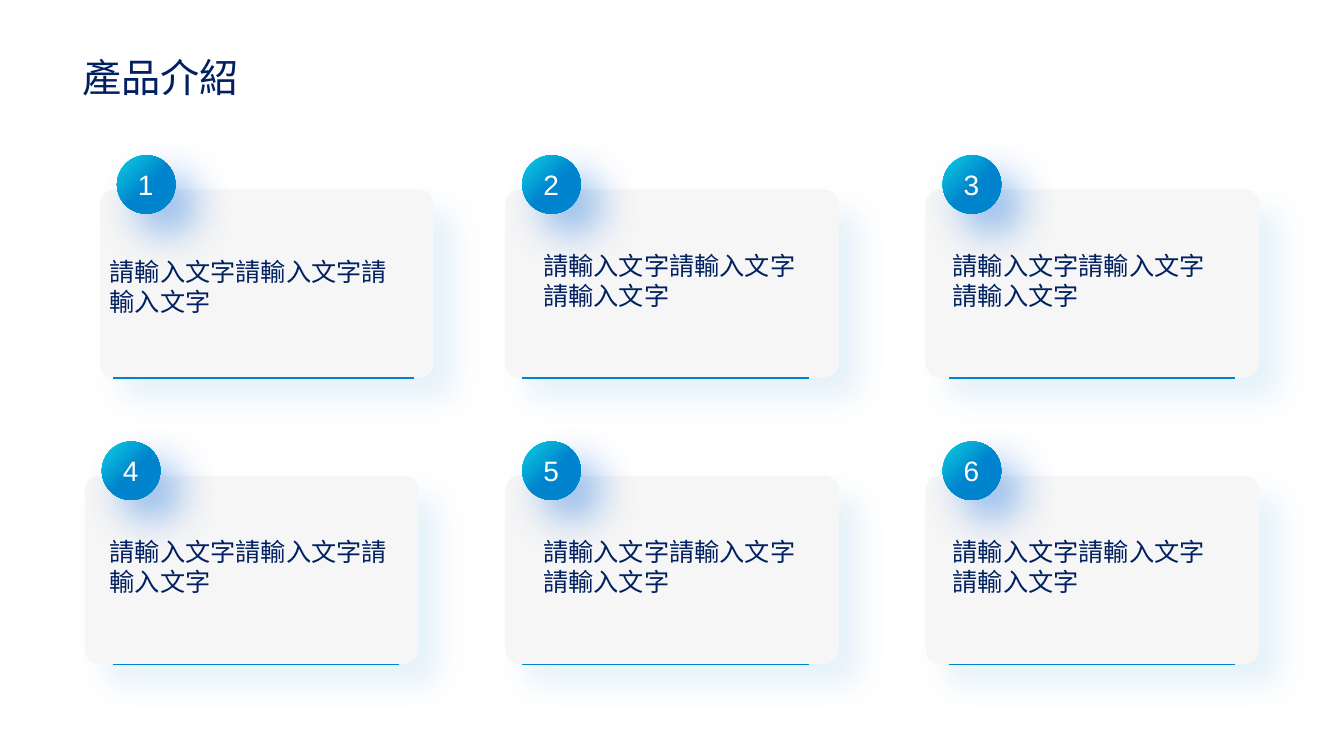
from lxml import etree
from pptx import Presentation
from pptx.dml.color import RGBColor
from pptx.enum.shapes import MSO_CONNECTOR, MSO_SHAPE
from pptx.enum.text import MSO_AUTO_SIZE
from pptx.oxml.ns import qn
from pptx.util import Inches, Pt

ROUNDED = MSO_SHAPE.ROUNDED_RECTANGLE
OVAL = MSO_SHAPE.OVAL
STRAIGHT = MSO_CONNECTOR.STRAIGHT
FIT_SHAPE = MSO_AUTO_SIZE.SHAPE_TO_FIT_TEXT

COLORS = {
    "navy": "002060",
    "white": "FFFFFF",
    "card": "F6F6F6",
    "blue": "0084CD",
    "cyan": "0BD0E3",
    "glow": "0868DE",
}
CJK_FONT = "Noto Sans CJK SC"
CARD_TEXT = "請輸入文字請輸入文字請輸入文字"
CARD_WIDTH, CARD_HEIGHT, BADGE_SIZE = 3.31, 1.87, 0.58
ROW_TOPS = [1.88, 4.72]
COLUMNS = [
    {"card": 0.84, "text": 0.99, "text_width": 2.97, "line": 1.12},
    {"card": 5.01, "text": 5.29, "text_width": 2.73, "line": 5.18},
    {"card": 9.18, "text": 9.35, "text_width": 2.9, "line": 9.41},
]


def add_text(shapes, text, left, top, width, height, size, color, font="Arial", wrap=True):
    box = shapes.add_textbox(Inches(left), Inches(top), Inches(width), Inches(height))
    frame = box.text_frame
    frame.word_wrap = wrap
    frame.auto_size = FIT_SHAPE
    run = frame.paragraphs[0].add_run()
    run.text = text
    run.font.size = Pt(size)
    run.font.name = font
    run.font.color.rgb = RGBColor.from_string(COLORS[color])
    east_asian = etree.SubElement(run._r.get_or_add_rPr(), qn("a:ea"))
    east_asian.set("typeface", CJK_FONT)


def add_shadow(shape, color, alpha, blur, distance):
    shape.shadow.inherit = False
    effects = shape._element.spPr.find(qn("a:effectLst"))
    shadow = etree.SubElement(effects, qn("a:outerShdw"), blurRad=str(Pt(blur)),
                              dist=str(Pt(distance)), dir="2700000", algn="tl",
                              rotWithShape="0")
    tint = etree.SubElement(shadow, qn("a:srgbClr"), val=COLORS[color])
    etree.SubElement(tint, qn("a:alpha"), val=str(alpha * 1000))


presentation = Presentation()
presentation.slide_width = Inches(13.33)
presentation.slide_height = Inches(7.5)
slide = presentation.slides.add_slide(presentation.slide_layouts[6])

add_text(slide.shapes, "產品介紹", 0.72, 0.48, 1.76, 0.57,
         size=28, color="navy", font=CJK_FONT, wrap=False)

for row, card_top in enumerate(ROW_TOPS):
    for column, place in enumerate(COLUMNS):
        number = row * len(COLUMNS) + column + 1
        is_first = number == 1
        card_left = place["card"] + (0.15 if is_first else 0)
        shapes = slide.shapes.add_group_shape().shapes

        card = shapes.add_shape(ROUNDED, Inches(card_left), Inches(card_top),
                                Inches(CARD_WIDTH), Inches(CARD_HEIGHT))
        card.adjustments[0] = 0.079
        card.fill.solid()
        card.fill.fore_color.rgb = RGBColor.from_string(COLORS["card"])
        card.line.fill.background()
        add_shadow(card, "blue", alpha=10, blur=22, distance=21)

        badge = shapes.add_shape(OVAL, Inches(card_left + 0.17), Inches(card_top - 0.34),
                                 Inches(BADGE_SIZE), Inches(BADGE_SIZE))
        badge.fill.gradient()
        badge.fill.gradient_angle = 315
        for stop, color, position in zip(badge.fill.gradient_stops, ["cyan", "blue"], [0, 0.53]):
            stop.color.rgb = RGBColor.from_string(COLORS[color])
            stop.position = position
        badge.line.fill.background()
        add_shadow(badge, "glow", alpha=44, blur=30, distance=20)

        add_text(shapes, str(number), card_left + 0.28, card_top - 0.27, 0.35, 0.44,
                 size=20, color="white", wrap=False)

        line_y = Inches(card_top + CARD_HEIGHT)
        line_width = 2.99 if is_first else 2.84
        underline = shapes.add_connector(STRAIGHT, Inches(place["line"]), line_y,
                                         Inches(place["line"] + line_width), line_y)
        underline.line.color.rgb = RGBColor.from_string(COLORS["blue"])
        underline.line.width = Pt(1)
        etree.SubElement(underline._element.spPr, qn("a:effectLst"))

        add_text(slide.shapes, CARD_TEXT, place["text"],
                 card_top + (0.61 if is_first else 0.55),
                 place["text_width"] + (0.15 if is_first else 0), 0.71,
                 size=18, color="navy")

presentation.save("out.pptx")
